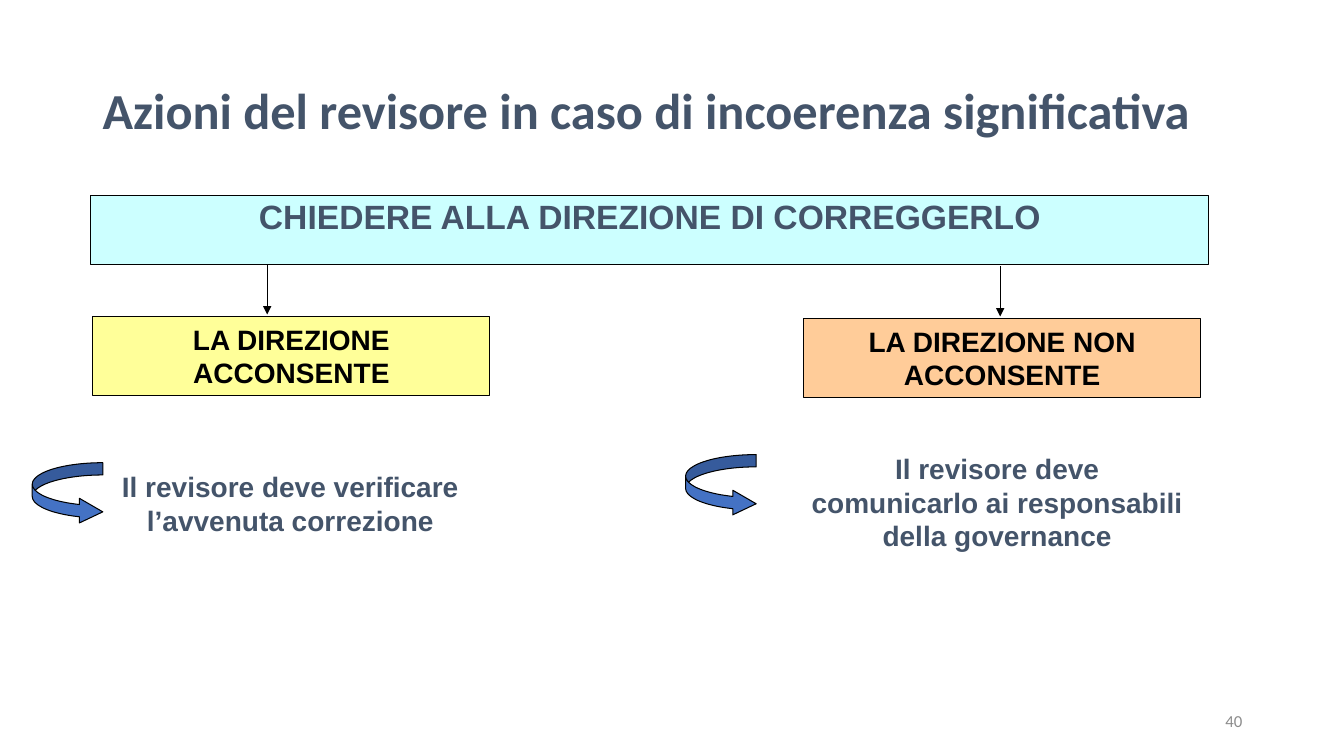
from lxml import etree
from pptx import Presentation
from pptx.dml.color import RGBColor
from pptx.enum import shapes, text
from pptx.oxml import ns
from pptx.util import Inches, Pt

SLATE = RGBColor(0x44, 0x54, 0x6A)
BLACK = RGBColor(0, 0, 0)
GRAY = RGBColor(0x8C, 0x8C, 0x8C)
CYAN = RGBColor(0xCC, 0xFF, 0xFF)
YELLOW = RGBColor(0xFF, 0xFF, 0x99)
ORANGE = RGBColor(0xFF, 0xCC, 0x99)
BLUE = RGBColor(0x44, 0x72, 0xC4)

deck = Presentation()
deck.slide_width, deck.slide_height = Inches(13.33), Inches(7.5)
slide = deck.slides.add_slide(deck.slide_layouts[6])
items = slide.shapes


def paint(shape, fill):
    shape.shadow.inherit = False
    shape.fill.solid()
    shape.fill.fore_color.rgb = fill
    shape.line.color.rgb = BLACK
    shape.line.width = Pt(0.75)


def write(words, x, y, w, h, fill=None, size=20, color=SLATE, font="Arial",
          bold=True, align="CENTER", anchor="MIDDLE", inset=0.05, lead=1.0):
    place = [Inches(n) for n in (x, y, w, h)]
    if fill is None:
        box = items.add_textbox(*place)
    else:
        box = items.add_shape(shapes.MSO_SHAPE.RECTANGLE, *place)
        paint(box, fill)
    frame = box.text_frame
    frame.word_wrap = True
    frame.margin_top = frame.margin_bottom = Inches(inset)
    frame.vertical_anchor = text.MSO_ANCHOR[anchor]
    para = frame.paragraphs[0]
    para.alignment = text.PP_ALIGN[align]
    para.line_spacing = lead
    run = para.add_run()
    run.text = words
    run.font.name, run.font.size, run.font.bold = font, Pt(size), bold
    run.font.color.rgb = color


# Title and page number
write("Azioni del revisore in caso di incoerenza significativa",
      0.92, 0.4, 11.5, 1.45, size=36, font="Calibri", align="LEFT", lead=0.9)
write("40", 9.42, 6.95, 3, 0.4, size=12, color=GRAY, font="Calibri",
      bold=False, align="RIGHT")

# Request to management
write("CHIEDERE ALLA DIREZIONE DI CORREGGERLO", 0.9, 1.94, 11.09, 0.68,
      fill=CYAN, size=24, anchor="TOP", inset=0)

# Two outcomes: reply box, action note, down arrow, curved arrow
cases = [
    ("LA DIREZIONE ACCONSENTE", (0.92, 3.14), YELLOW,
     "Il revisore deve verificare l’avvenuta correzione",
     (0.94, 4.61, 3.88, 0.77), (2.65, 2.62), (0.32, 4.59)),
    ("LA DIREZIONE NON ACCONSENTE", (7.97, 3.16), ORANGE,
     "Il revisore deve comunicarlo ai responsabili della governance",
     (7.95, 4.43, 3.88, 1.1), (9.92, 2.64), (6.8, 4.51)),
]
for reply, spot, fill, action, note, (x, y), (left, top) in cases:
    write(reply, *spot, 3.94, 0.78, fill=fill, color=BLACK)
    write(action, *note)

    arrow = items.add_connector(shapes.MSO_CONNECTOR.STRAIGHT, Inches(x),
                                Inches(y), Inches(x), Inches(y + 0.5))
    arrow.line.color.rgb = BLACK
    arrow.line.width = Pt(0.75)
    etree.SubElement(arrow.line._get_or_add_ln(), ns.qn("a:tailEnd"),
                     type="triangle")
    etree.SubElement(arrow._element.spPr, ns.qn("a:effectLst"))

    curve = items.add_shape(shapes.MSO_SHAPE.CURVED_RIGHT_ARROW, Inches(left),
                            Inches(top), Inches(0.7), Inches(0.61))
    paint(curve, BLUE)
    for i, part in enumerate((0.2, 0.4, 0.384)):
        curve.adjustments[i] = round(part, 2)

deck.save("out.pptx")
